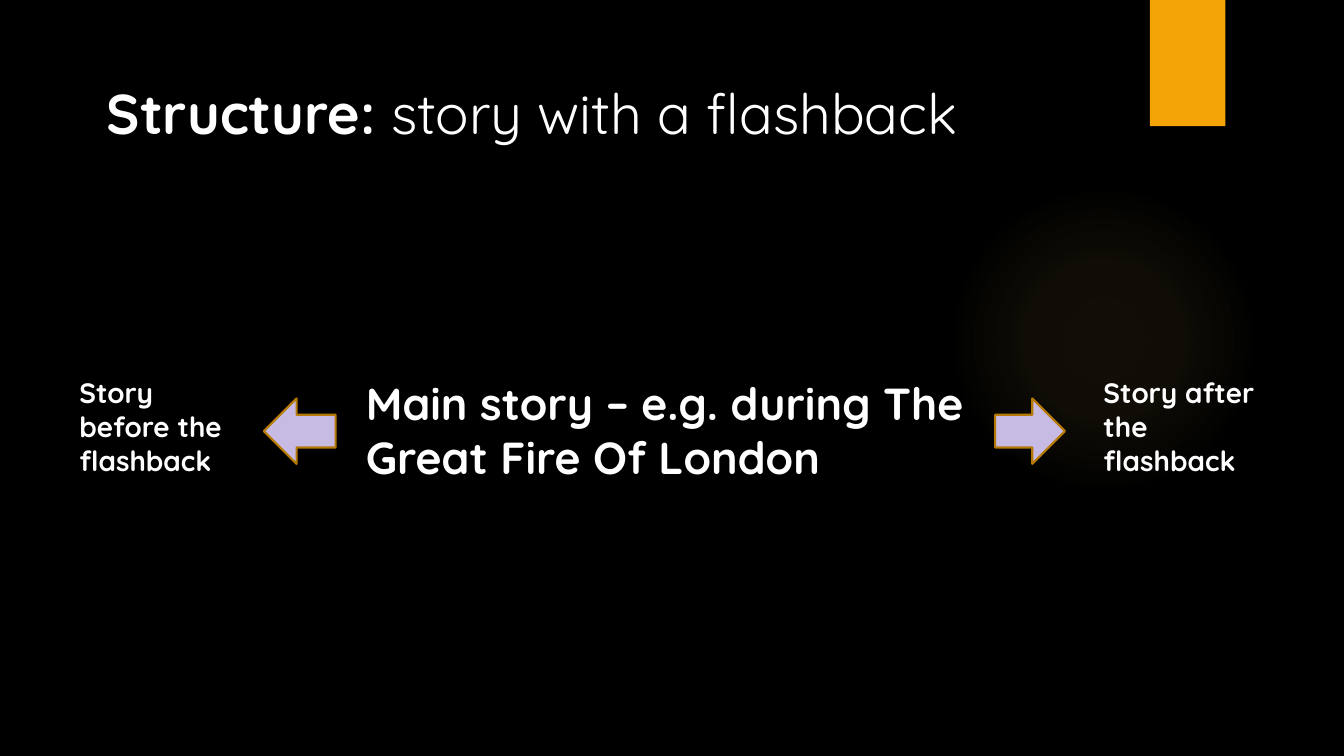
import pptx
import pptx.dml.color
import pptx.enum.shapes
import pptx.oxml
import pptx.oxml.ns
import pptx.util

Cm = pptx.util.Cm
Pt = pptx.util.Pt
SHAPE = pptx.enum.shapes.MSO_SHAPE
FONT = "Quicksand"
COLORS = {
    "background": "000000",
    "text": "FFFFFF",
    "tab": "F5A408",
    "glow": "FAC96A",
    "arrow": "C7BAE3",
    "arrow_line": "B57906",
}
GLOW_STOPS = [(0, 7), (36, 6), (69, 0)]


def rgb(name):
    """Return the named colour."""
    return pptx.dml.color.RGBColor.from_string(COLORS[name])


def add_text(slide, text, left, top, width, height, size=20, bold=True, tail=""):
    """Add a wrapped text box, with an optional regular-weight tail."""
    tf = slide.shapes.add_textbox(Cm(left), Cm(top), Cm(width), Cm(height)).text_frame
    tf.word_wrap = True
    p = tf.paragraphs[0]
    for part, weight in ((text, bold), (tail, False)):
        if part:
            r = p.add_run()
            r.text = part
            r.font.name = FONT
            r.font.size = Pt(size)
            r.font.bold = weight
            r.font.color.rgb = rgb("text")


def add_shape(slide, kind, left, top, width, height, fill=None, line=None):
    """Add a preset shape without a shadow."""
    sp = slide.shapes.add_shape(kind, Cm(left), Cm(top), Cm(width), Cm(height))
    sp.shadow.inherit = False
    if fill:
        sp.fill.solid()
        sp.fill.fore_color.rgb = rgb(fill)
    else:
        sp.fill.background()
    if line:
        sp.line.color.rgb = rgb(line)
        sp.line.width = Pt(1.5)
    else:
        sp.line.fill.background()
    return sp


def add_glow(slide, left, top, size):
    """Add a faint round glow that fades outwards."""
    sp = add_shape(slide, SHAPE.OVAL, left, top, size, size)
    stops = "".join(
        f'<a:gs pos="{pos * 1000}"><a:srgbClr val="{COLORS["glow"]}">'
        f'<a:alpha val="{alpha * 1000}"/></a:srgbClr></a:gs>'
        for pos, alpha in GLOW_STOPS
    )
    grad = pptx.oxml.parse_xml(
        f'<a:gradFill {pptx.oxml.ns.nsdecls("a")}><a:gsLst>{stops}</a:gsLst>'
        '<a:path path="circle"><a:fillToRect l="50000" t="50000" r="50000" b="50000"/>'
        "</a:path></a:gradFill>"
    )
    sp_pr = sp._element.spPr
    sp_pr.replace(sp_pr.find(pptx.oxml.ns.qn("a:noFill")), grad)


def add_backdrop(slide):
    """Set the background and add the glow and the corner tab."""
    slide.background.fill.solid()
    slide.background.fill.fore_color.rgb = rgb("background")
    add_glow(slide, 23.9, 4.65, 7.82)
    add_shape(slide, SHAPE.RECTANGLE, 28.98, 0, 1.9, 3.18, fill="tab")


def add_timeline(slide, left, top, height):
    """Place the main story between its before and after parts."""
    add_text(slide, "Story before the flashback", left, top, 4.4, height)
    add_text(slide, "Main story – e.g. during The Great Fire Of London",
             left + 7.22, top, 16.13, height, size=32)
    add_text(slide, "Story after the flashback", left + 25.81, top, 4.45, height)
    for kind, offset, width in ((SHAPE.LEFT_ARROW, 4.9, 1.81), (SHAPE.RIGHT_ARROW, 23.33, 1.76)):
        add_shape(slide, kind, left + offset, top + 0.69, width, 1.65,
                  fill="arrow", line="arrow_line")


def main():
    """Build and save the slide."""
    prs = pptx.Presentation()
    prs.slide_width, prs.slide_height = Cm(33.87), Cm(19.05)
    slide = prs.slides.add_slide(prs.slide_layouts[6])
    add_backdrop(slide)
    add_text(slide, "Structure: ", 2.44, 1.85, 22.3, 5.38, size=40, tail="story with a flashback")
    add_timeline(slide, 1.75, 9.35, 2.82)
    prs.save("out.pptx")


if __name__ == "__main__":
    main()
